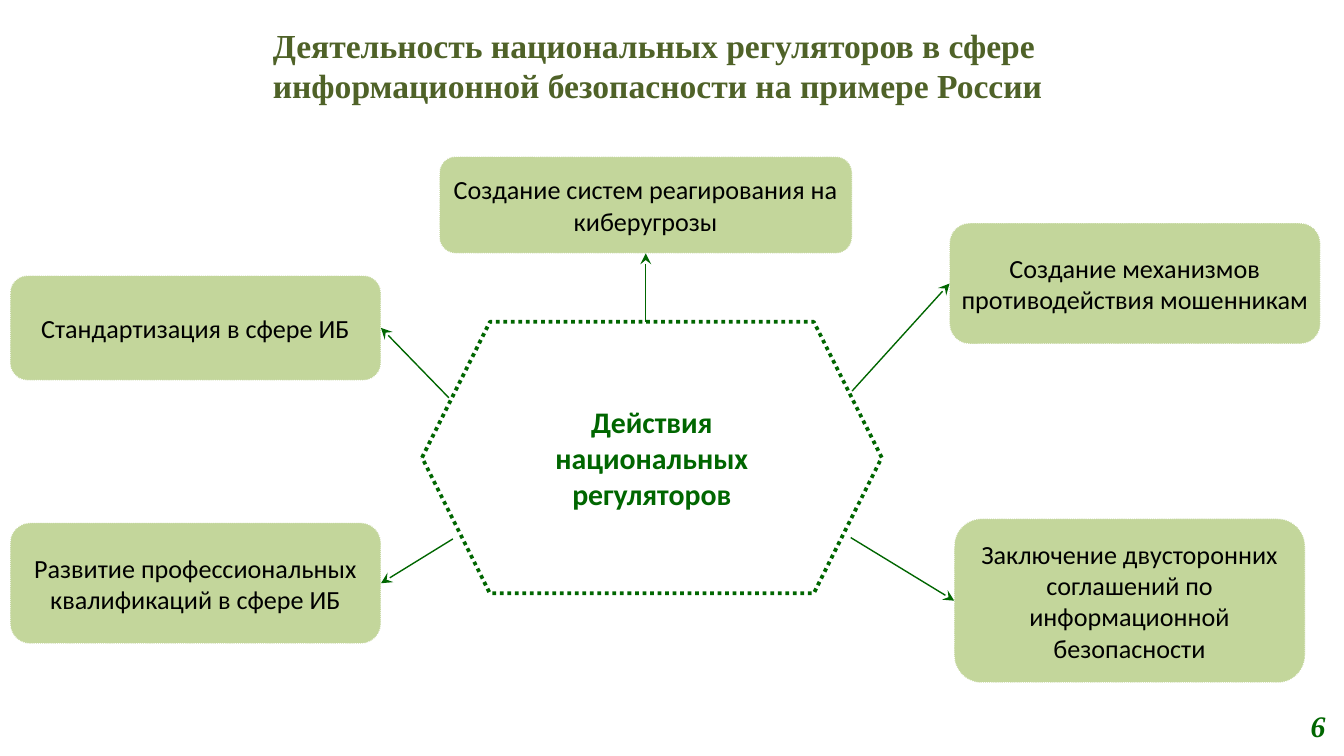
"""Build a slide on the work of national information security regulators."""
from lxml.etree import SubElement
from pptx import Presentation
from pptx.dml.color import RGBColor
from pptx.enum.dml import MSO_LINE
from pptx.enum.shapes import MSO_CONNECTOR, MSO_SHAPE
from pptx.enum.text import MSO_ANCHOR as ANCHOR, MSO_AUTO_SIZE, PP_ALIGN as ALIGN
from pptx.oxml.ns import qn
from pptx.util import Inches, Pt

OLIVE = RGBColor(0x4F, 0x62, 0x28)
GREEN = RGBColor(0x00, 0x66, 0x00)
LIGHT_GREEN = RGBColor(0xC3, 0xD6, 0x9B)
WHITE = RGBColor(0xFF, 0xFF, 0xFF)
BLACK = RGBColor(0x00, 0x00, 0x00)
TOP, LEFT, BOTTOM, RIGHT = range(4)

deck = Presentation()
deck.slide_width = Inches(10)
deck.slide_height = deck.slide_width * 9 // 16
CELL = deck.slide_width / 100
slide = deck.slides.add_slide(deck.slide_layouts[5])


def cells(*counts):
    return [round(count * CELL) for count in counts]


def write(shape, text, font_name, size, color, align, anchor, bold=False, italic=False):
    frame = shape.text_frame
    frame.word_wrap = True
    frame.auto_size = MSO_AUTO_SIZE.NONE
    frame.vertical_anchor = anchor
    paragraph = frame.paragraphs[0]
    paragraph.alignment = align
    run = paragraph.add_run()
    run.text = text
    font = run.font
    font.name, font.size, font.bold, font.italic = font_name, Pt(size), bold, italic
    font.color.rgb = color


title = slide.shapes.title
title.left, title.top, title.width, title.height = cells(19.3, 1.35, 76.4, 5.3)
write(title, "Деятельность национальных регуляторов в сфере информационной безопасности "
      "на примере России", "Times New Roman", 18, OLIVE, ALIGN.LEFT, ANCHOR.TOP, bold=True)

page_number = slide.shapes.add_textbox(*cells(95.7, 52.55, 3.9, 2.9))
write(page_number, "6", "Times New Roman", 16, GREEN, ALIGN.RIGHT, ANCHOR.MIDDLE,
      bold=True, italic=True)

center = slide.shapes.add_shape(MSO_SHAPE.HEXAGON, *cells(31.4, 23.95, 34.2, 20.2))
center.shadow.inherit = False
center.fill.solid()
center.fill.fore_color.rgb = WHITE
center.line.color.rgb = GREEN
center.line.width = Pt(2)
center.line.dash_style = MSO_LINE.ROUND_DOT
write(center, "Действия национальных регуляторов", "Calibri", 16, GREEN,
      ALIGN.CENTER, ANCHOR.MIDDLE, bold=True)

actions = [
    ("Создание систем реагирования на киберугрозы",
     (32.7, 11.65, 30.7, 7.2), (48.05, 23.95), BOTTOM),
    ("Создание механизмов противодействия мошенникам",
     (70.65, 16.6, 27.6, 9), (63.4, 29.1), LEFT),
    ("Заключение двусторонних соглашений по информационной безопасности",
     (71, 38.6, 26.1, 12.2), (63.3, 40), LEFT),
    ("Развитие профессиональных квалификаций в сфере ИБ",
     (0.75, 38.9, 27.6, 9), (33.7, 40.1), RIGHT),
    ("Стандартизация в сфере ИБ",
     (0.75, 20.5, 27.6, 7.8), (33.4, 29.6), RIGHT),
]
for text, area, start, side in actions:
    action = slide.shapes.add_shape(MSO_SHAPE.ROUNDED_RECTANGLE, *cells(*area))
    action.shadow.inherit = False
    action.fill.solid()
    action.fill.fore_color.rgb = LIGHT_GREEN
    action.line.color.rgb = WHITE
    action.line.width = Pt(0.5)
    action.line.dash_style = MSO_LINE.ROUND_DOT
    action.text_frame.margin_left = action.text_frame.margin_right = Inches(0.04)
    write(action, text, "Calibri", 14, BLACK, ALIGN.CENTER, ANCHOR.MIDDLE)

    arrow = slide.shapes.add_connector(MSO_CONNECTOR.STRAIGHT, *cells(*start, *start))
    arrow.end_connect(action, side)
    arrow.line.color.rgb = GREEN
    arrow.line.width = Pt(0.75)
    SubElement(arrow.line._get_or_add_ln(), qn("a:tailEnd"), type="stealth")
    SubElement(arrow._element.spPr, qn("a:effectLst"))

deck.save("out.pptx")
